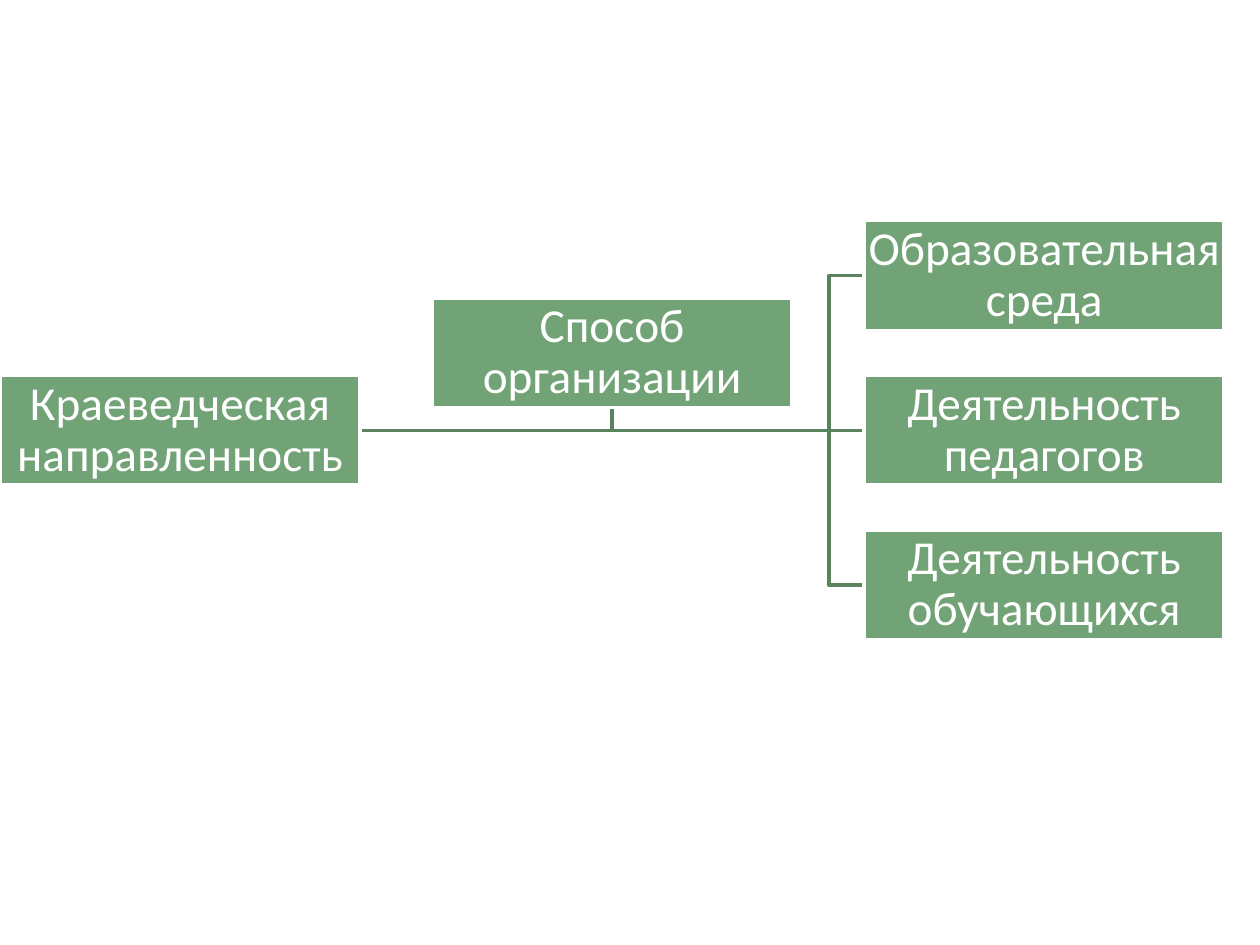
from pptx import Presentation
from pptx.dml.color import RGBColor
from pptx.enum.shapes import MSO_CONNECTOR, MSO_SHAPE
from pptx.enum.text import MSO_ANCHOR, PP_ALIGN
from pptx.oxml.ns import qn
from pptx.util import Cm, Pt
from lxml.etree import SubElement

COLORS = {"box": "72A376", "link": "5B835E", "white": "FFFFFF"}
FONT = "Calibri"
WIDE, HIGH = 7.26, 2.21      # size of each box, cm
COL, ROW = 8.71, 3.12        # steps between columns and rows, cm
BEND = 0.71                  # distance from trunk to branch boxes, cm

ROOT = "Краеведческая направленность"
SIDE = "Способ организации"
LEAVES = ["Образовательная среда", "Деятельность педагогов",
          "Деятельность обучающихся"]


def set_line(shape, color):
    shape.line.color.rgb = RGBColor.from_string(COLORS[color])
    shape.line.width = Pt(2)


def add_link(slide, points):
    """Draw an open line through points given in cm."""
    ends = [(Cm(x), Cm(y)) for x, y in points]
    if len(ends) == 2:
        link = slide.shapes.add_connector(
            MSO_CONNECTOR.STRAIGHT, *ends[0], *ends[1])
        SubElement(link._element.spPr, qn("a:effectLst"))
    else:
        pen = slide.shapes.build_freeform(*ends[0])
        pen.add_line_segments(ends[1:], close=False)
        link = pen.convert_to_shape()
        link.fill.background()
        link.shadow.inherit = False
    set_line(link, "link")


def add_box(slide, left, top, text):
    box = slide.shapes.add_shape(
        MSO_SHAPE.RECTANGLE, Cm(left), Cm(top), Cm(WIDE), Cm(HIGH))
    box.shadow.inherit = False
    box.fill.solid()
    box.fill.fore_color.rgb = RGBColor.from_string(COLORS["box"])
    set_line(box, "white")

    frame = box.text_frame
    frame.text = text
    frame.word_wrap = True
    frame.vertical_anchor = MSO_ANCHOR.MIDDLE
    frame.margin_left = frame.margin_right = Cm(0.05)
    frame.margin_top = frame.margin_bottom = Cm(0.05)
    para = frame.paragraphs[0]
    para.alignment = PP_ALIGN.CENTER
    para.line_spacing = 0.9
    font = para.runs[0].font
    font.name = FONT
    font.size = Pt(27)
    font.color.rgb = RGBColor.from_string(COLORS["white"])


def add_chart(slide, left, top):
    """Place the sideways tree with its top left corner at left, top."""
    mid = top + ROW                  # top of the root box
    axis = mid + HIGH / 2
    start = left + WIDE
    end = left + 2 * COL
    trunk = end - BEND
    side = mid - ROW / 2             # top of the side box
    center = left + COL + WIDE / 2

    # Links, behind the boxes
    add_link(slide, [(start, axis), (center, axis), (center, side + HIGH)])
    add_link(slide, [(start, axis), (end, axis)])
    for y in (axis + ROW, axis - ROW):
        add_link(slide, [(start, axis), (trunk, axis), (trunk, y), (end, y)])

    # Boxes
    add_box(slide, left, mid, ROOT)
    for row, text in enumerate(LEAVES):
        add_box(slide, end, top + row * ROW, text)
    add_box(slide, left + COL, side, SIDE)


def main():
    deck = Presentation()
    deck.slide_width, deck.slide_height = Cm(25.4), Cm(19.05)
    slide = deck.slides.add_slide(deck.slide_layouts[6])
    add_chart(slide, 0, 4.45)
    deck.save("out.pptx")


if __name__ == "__main__":
    main()
